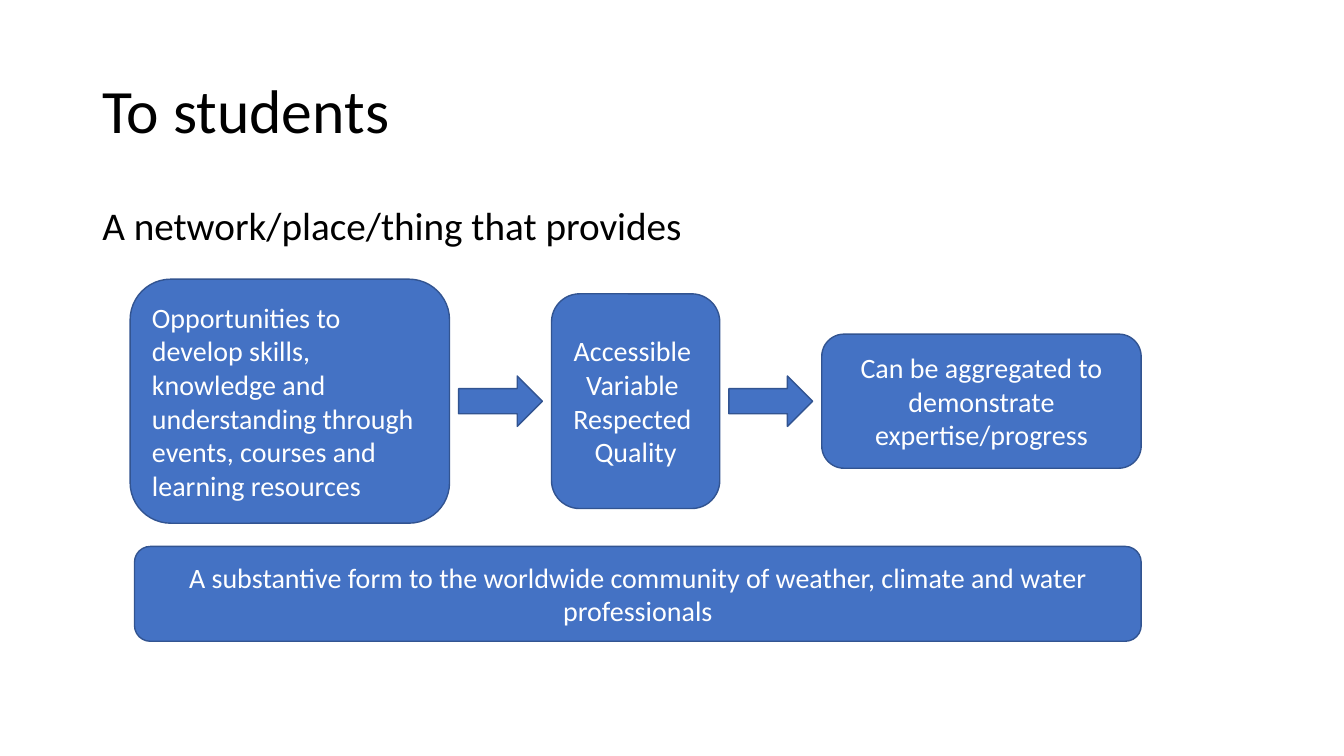
from pptx import Presentation
from pptx import util as u
from pptx.dml import color
from pptx.enum import shapes, text

BLACK = color.RGBColor(0x00, 0x00, 0x00)
WHITE = color.RGBColor(0xFF, 0xFF, 0xFF)
BLUE = color.RGBColor(0x44, 0x72, 0xC4)
OUTLINE = color.RGBColor(0x32, 0x54, 0x91)
LEFT, CENTER = text.PP_ALIGN.LEFT, text.PP_ALIGN.CENTER
TOP, MIDDLE = text.MSO_ANCHOR.TOP, text.MSO_ANCHOR.MIDDLE


class StudentSlide:
    """Draws headings, boxes and arrows on one slide in a shared style."""

    font_name = "Calibri"

    def __init__(self, slide):
        self.items = slide.shapes

    def add_lines(self, frame, lines, size, ink, align, anchor, **spacing):
        for key, value in {"word_wrap": True, "vertical_anchor": anchor}.items():
            setattr(frame, key, value)
        for index, line in enumerate(lines):
            paragraph = frame.add_paragraph() if index else frame.paragraphs[0]
            run = paragraph.add_run()
            run.text = line
            for key, value in {"alignment": align, **spacing}.items():
                setattr(paragraph, key, value)
            for key, value in {"name": self.font_name, "size": u.Pt(size)}.items():
                setattr(run.font, key, value)
            run.font.color.rgb = ink

    def heading(self, line, place, size, anchor, **spacing):
        area = self.items.add_textbox(*map(u.Cm, place))
        self.add_lines(area.text_frame, [line], size, BLACK, LEFT, anchor,
                       line_spacing=0.9, **spacing)

    def figure(self, preset, place):
        figure = self.items.add_shape(preset, *map(u.Cm, place))
        figure.shadow.inherit = False
        figure.fill.solid()
        figure.fill.fore_color.rgb = BLUE
        figure.line.color.rgb = OUTLINE
        figure.line.width = u.Pt(1)
        return figure

    def box(self, lines, place, align=CENTER):
        box = self.figure(shapes.MSO_SHAPE.ROUNDED_RECTANGLE, place)
        self.add_lines(box.text_frame, lines, 20, WHITE, align, MIDDLE)

    def arrow(self, place):
        self.figure(shapes.MSO_SHAPE.RIGHT_ARROW, place)


def main():
    deck = Presentation()
    deck.slide_width, deck.slide_height = u.Cm(33.87), u.Cm(19.05)
    page = StudentSlide(deck.slides.add_slide(deck.slide_layouts[6]))

    page.heading("To students", (2.33, 1.01, 29.21, 3.68), 44, MIDDLE)
    page.heading("A network/place/thing that provides", (2.33, 5.07, 29.21, 12.09),
                 28, TOP, space_before=u.Pt(10))

    opportunities = ["Opportunities to develop skills, knowledge and understanding "
                     "through events, courses and learning resources"]
    qualities = ["Accessible ", "Variable ", "Respected ", "Quality"]
    outcome = ["Can be aggregated to demonstrate expertise/progress"]
    stages = [
        (opportunities, 8.05, 6.15, LEFT),
        (qualities, 4.24, 5.41, CENTER),
        (outcome, 8.05, 3.38, CENTER),
    ]
    row_middle, gap, arrow_width, arrow_height = 10.11, 0.23, 2.11, 1.27
    left = 3.28
    for number, (lines, width, height, align) in enumerate(stages):
        if number:
            page.arrow((left + gap, row_middle - arrow_height / 2,
                        arrow_width, arrow_height))
            left += arrow_width + 2 * gap
        page.box(lines, (left, row_middle - height / 2, width, height), align)
        left += width

    page.box(["A substantive form to the worldwide community of weather, "
              "climate and water professionals"], (3.39, 13.77, 25.37, 2.39))
    deck.save("out.pptx")


if __name__ == "__main__":
    main()
